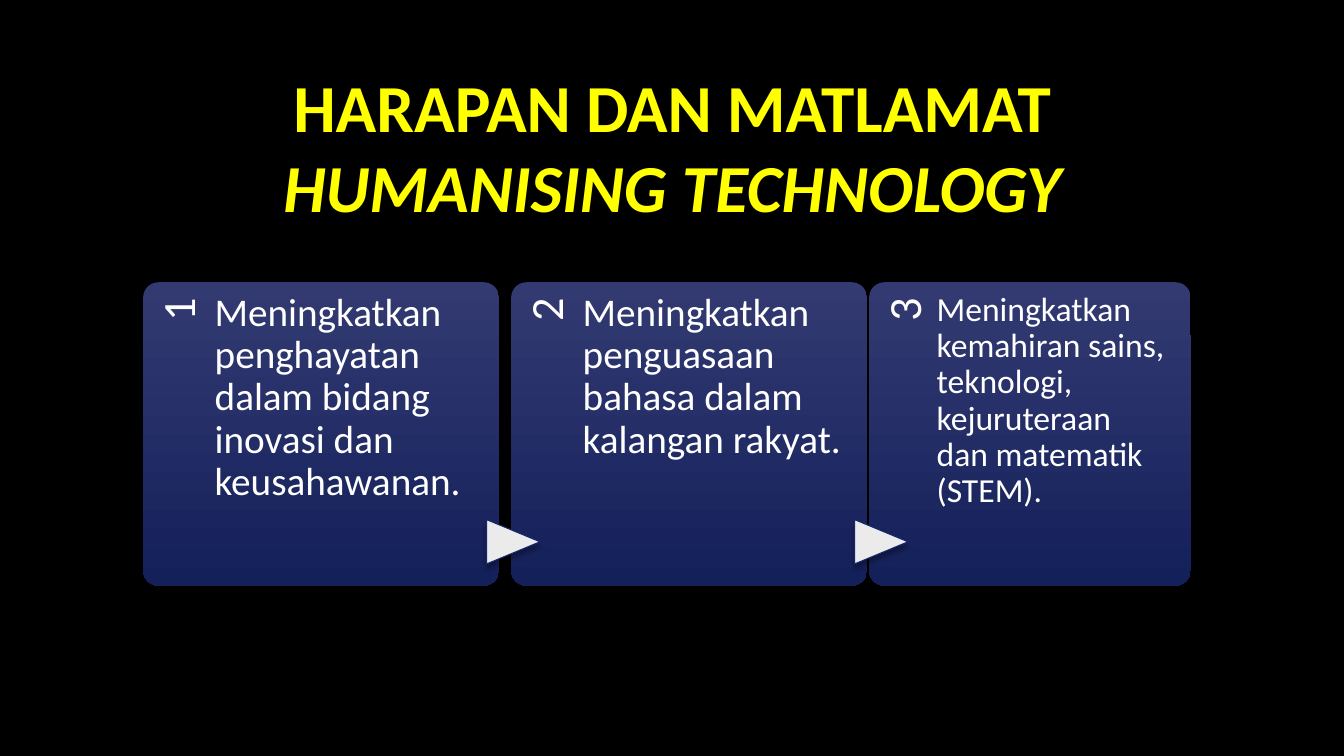
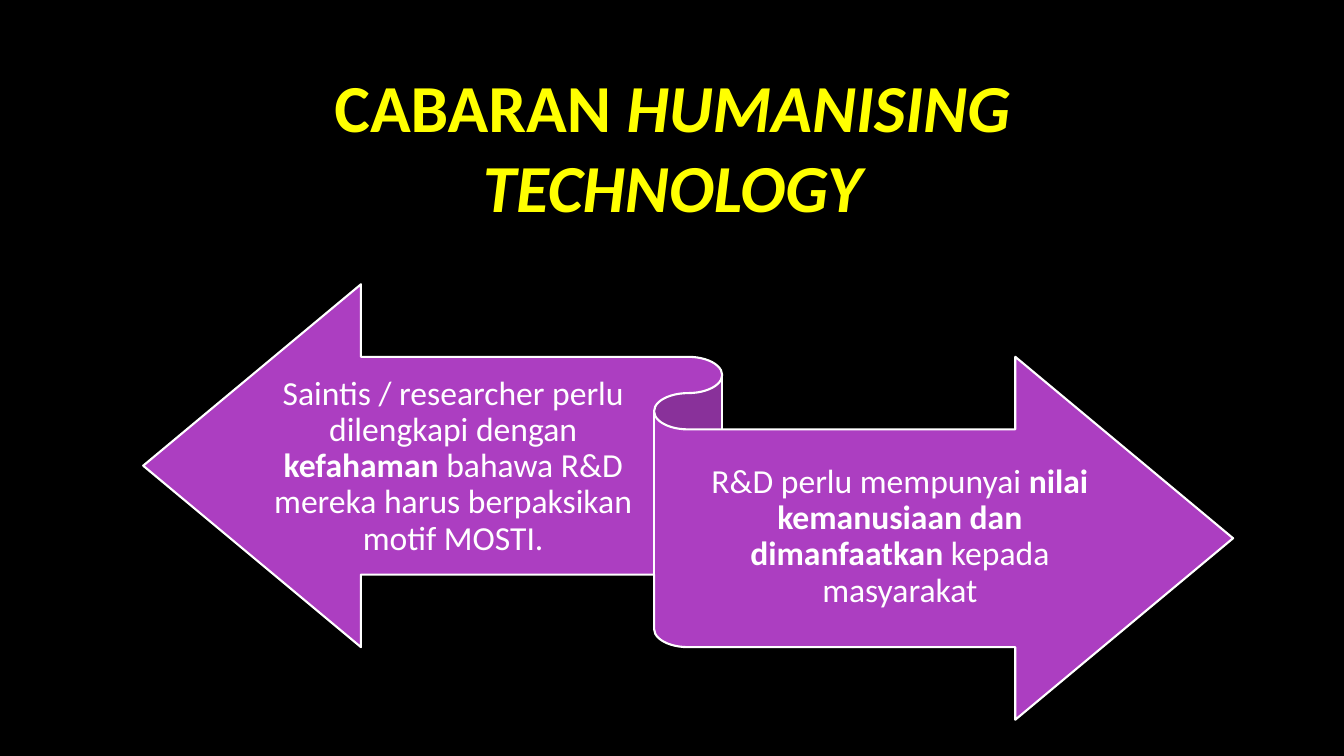
from dataclasses import dataclass

from lxml import etree
from pptx import Presentation
from pptx import util as u
from pptx.dml import color
from pptx.enum import shapes, text
from pptx.oxml import ns


@dataclass(frozen=True)
class Theme:
    font: str = "Calibri"
    background: str = "000000"
    title: str = "FFFF00"
    body: str = "FFFFFF"
    card_top: str = "333A72"
    card_bottom: str = "14205A"
    arrow: str = "EBEBEB"
    arrow_line: str = "18276C"
    ribbon: str = "AC3EC1"
    title_size: int = 48
    number_size: int = 33
    large_size: int = 28
    body_size: int = 24


def rgb(value):
    return color.RGBColor.from_string(value)


def write(frame, content, *, font, size, ink, align=text.PP_ALIGN.LEFT,
          anchor=text.MSO_ANCHOR.TOP, insets=(0, 0, 0, 0), spacing=0.9,
          bold=False, emphasis="bold"):
    frame.word_wrap = True
    frame.auto_size = text.MSO_AUTO_SIZE.NONE
    frame.vertical_anchor = anchor
    (frame.margin_left, frame.margin_top,
     frame.margin_right, frame.margin_bottom) = map(u.Inches, insets)
    paragraph = frame.paragraphs[0]
    paragraph.alignment = align
    paragraph.line_spacing = spacing
    for index, part in enumerate(content.split("|")):
        for line_index, line in enumerate(part.split("\n")):
            if line_index:
                paragraph.add_line_break()
            run = paragraph.add_run()
            run.text = line
            run.font.name = font
            run.font.size = u.Pt(size)
            run.font.color.rgb = rgb(ink)
            run.font.bold = bold
            if index % 2:
                setattr(run.font, emphasis, True)


def add_shadow(shape):
    effects = etree.SubElement(shape._element.spPr, ns.qn("a:effectLst"))
    shadow = etree.SubElement(effects, ns.qn("a:outerShdw"), blurRad=str(u.Pt(4)),
                              dist=str(u.Pt(3)), dir="5400000", rotWithShape="0")
    ink = etree.SubElement(shadow, ns.qn("a:srgbClr"), val="000000")
    etree.SubElement(ink, ns.qn("a:alpha"), val="35000")


class Deck:
    def __init__(self, theme):
        self.theme = theme
        self.presentation = Presentation()
        self.presentation.slide_width = u.Inches(13.33)
        self.presentation.slide_height = u.Inches(7.5)
        fill = self.presentation.slide_master.background.fill
        fill.solid()
        fill.fore_color.rgb = rgb(theme.background)
        self.slide = None

    def add_slide(self, title):
        layout = self.presentation.slide_layouts.get_by_name("Title Only")
        self.slide = self.presentation.slides.add_slide(layout)
        shape = self.slide.shapes.title
        shape.left, shape.top = u.Inches(1.42), u.Inches(1.07)
        shape.width, shape.height = u.Inches(10.5), u.Inches(0.75)
        write(shape.text_frame, title, font=self.theme.font, size=self.theme.title_size,
              ink=self.theme.title, align=text.PP_ALIGN.CENTER,
              anchor=text.MSO_ANCHOR.MIDDLE, insets=(0.1, 0.05, 0.1, 0.05),
              spacing=1, bold=True, emphasis="italic")

    def add_text(self, box, content, rotation=0, **style):
        shape = self.slide.shapes.add_textbox(*map(u.Inches, box))
        shape.rotation = rotation
        style = {"size": self.theme.body_size, **style}
        write(shape.text_frame, content, font=self.theme.font, ink=self.theme.body, **style)

    def add_shape(self, kind, box, fill=None, line=None, line_width=0.75):
        shape = self.slide.shapes.add_shape(kind, *map(u.Inches, box))
        shape.shadow.inherit = False
        if fill:
            shape.fill.solid()
            shape.fill.fore_color.rgb = rgb(fill)
        if line:
            shape.line.color.rgb = rgb(line)
            shape.line.width = u.Pt(line_width)
        else:
            shape.line.fill.background()
        return shape

    def add_card(self, left, top, width, height):
        card = self.add_shape(shapes.MSO_SHAPE.ROUNDED_RECTANGLE, (left, top, width, height))
        card.adjustments[0] = 0.05
        card.fill.gradient()
        card.fill.gradient_angle = 270
        for stop, shade in zip(card.fill.gradient_stops,
                               (self.theme.card_top, self.theme.card_bottom)):
            stop.color.rgb = rgb(shade)

    def add_number(self, number, left, top, width):
        length = 2.47
        box = (left + (width - length) / 2, top + (length - width) / 2, length, width)
        self.add_text(box, str(number), rotation=270, size=self.theme.number_size,
                      align=text.PP_ALIGN.RIGHT, insets=(0, 0.12, 0.16, 0))

    def add_arrow(self, center):
        width, height = 0.44, 0.53
        arrow = self.add_shape(shapes.MSO_SHAPE.FLOWCHART_EXTRACT,
                               (center - width / 2, 5.11, width, height),
                               self.theme.arrow, self.theme.arrow_line)
        arrow.rotation = 90
        etree.strip_elements(arrow._element.spPr, ns.qn("a:effectLst"))
        add_shadow(arrow)

    def add_steps(self, steps):
        top, height = 2.8, 3.01
        previous_right = None
        for number, (left, width, body_left, size, content) in enumerate(steps, 1):
            self.add_card(left, top, width, height)
            self.add_number(number, left, top, width * 0.2)
            if previous_right:
                self.add_arrow(previous_right + 0.14)
            self.add_text((body_left, top, width * 0.745, height), content,
                          size=size, insets=(0, 0.1, 0, 0))
            previous_right = left + width

    def add_ribbon(self, box, labels):
        self.add_shape(shapes.MSO_SHAPE.LEFT_RIGHT_RIBBON, box,
                       self.theme.ribbon, self.theme.body, 1.5)
        for label_box, content in labels:
            self.add_text(label_box, content, align=text.PP_ALIGN.CENTER,
                          anchor=text.MSO_ANCHOR.MIDDLE, insets=(0, 0.09, 0, 0.1))


def main():
    theme = Theme()
    deck = Deck(theme)

    deck.add_slide("HARAPAN DAN MATLAMAT |HUMANISING TECHNOLOGY")
    deck.add_steps([
        (1.42, 3.53, 2.13, theme.large_size,
         "Meningkatkan penghayatan dalam bidang inovasi dan keusahawanan."),
        (5.07, 3.53, 5.78, theme.large_size,
         "Meningkatkan penguasaan bahasa dalam kalangan rakyat."),
        (8.62, 3.19, 9.29, theme.body_size,
         "Meningkatkan kemahiran sains, teknologi, kejuruteraan\ndan matematik (STEM)."),
    ])

    deck.add_slide("CABARAN |HUMANISING TECHNOLOGY")
    deck.add_ribbon((1.42, 2.82, 10.81, 4.32), [
        ((2.71, 3.39, 3.57, 2.49),
         "Saintis / researcher perlu dilengkapi dengan |kefahaman |"
         "bahawa R&D mereka harus berpaksikan motif MOSTI."),
        ((6.82, 4.27, 4.21, 2.12),
         "R&D perlu mempunyai |nilai kemanusiaan dan dimanfaatkan |kepada masyarakat"),
    ])

    deck.presentation.save("out.pptx")


if __name__ == "__main__":
    main()
